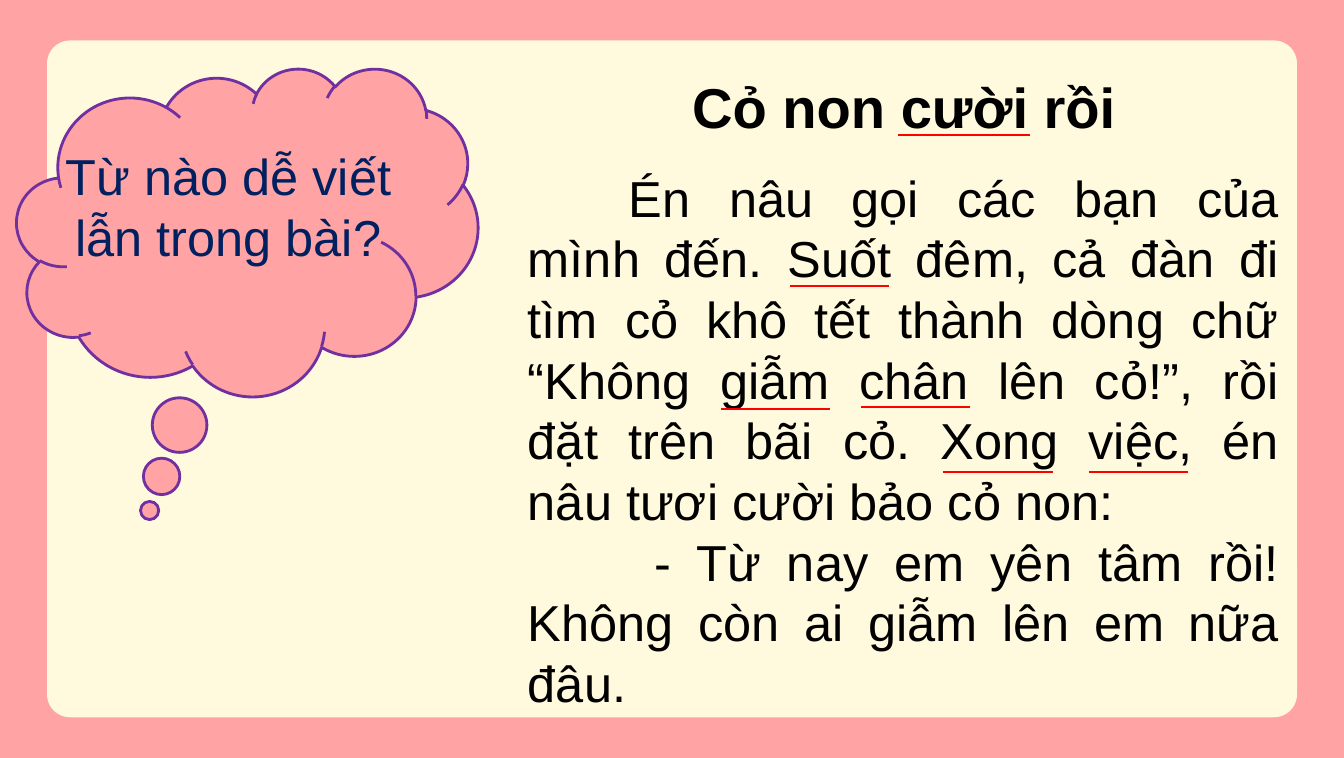
from dataclasses import dataclass

from lxml import etree
from pptx import Presentation
from pptx.dml.color import RGBColor
from pptx.enum.shapes import MSO_CONNECTOR, MSO_SHAPE
from pptx.enum.text import MSO_AUTO_SIZE, PP_ALIGN
from pptx.oxml.ns import qn
from pptx.util import Pt

ROUNDED = MSO_SHAPE.ROUNDED_RECTANGLE
CLOUD = MSO_SHAPE.CLOUD_CALLOUT
STRAIGHT = MSO_CONNECTOR.STRAIGHT
CENTER, JUSTIFY = PP_ALIGN.CENTER, PP_ALIGN.JUSTIFY
GROW = MSO_AUTO_SIZE.SHAPE_TO_FIT_TEXT


@dataclass(frozen=True)
class Theme:
    font: str = "Arial"
    pink: str = "FFA3A4"
    cream: str = "FFF9DE"
    purple: str = "7030A0"
    navy: str = "002060"
    black: str = "000000"
    red: str = "FF0000"
    title_size: int = 40
    body_size: int = 36
    outline: float = 2
    underline: float = 1.5


def rgb(value):
    return RGBColor.from_string(value)


class SlideBuilder:
    def __init__(self, slide, theme):
        self.slide = slide
        self.theme = theme

    def background(self, color):
        fill = self.slide.background.fill
        fill.solid()
        fill.fore_color.rgb = rgb(color)

    def panel(self, kind, box, adjustments, color, outline=None):
        panel = self.slide.shapes.add_shape(kind, *map(Pt, box))
        for index, value in enumerate(adjustments):
            panel.adjustments[index] = value
        panel.shadow.inherit = False
        panel.fill.solid()
        panel.fill.fore_color.rgb = rgb(color)
        if outline:
            panel.line.color.rgb = rgb(outline)
            panel.line.width = Pt(self.theme.outline)
        else:
            panel.line.fill.background()

    def text(self, box, paragraphs, size, color, align, bold=False):
        """Add a text box; paragraphs are (first-line indent, wording) pairs."""
        frame = self.slide.shapes.add_textbox(*map(Pt, box)).text_frame
        frame.word_wrap = True
        frame.auto_size = GROW
        for index, (indent, wording) in enumerate(paragraphs):
            paragraph = frame.add_paragraph() if index else frame.paragraphs[0]
            paragraph.alignment = align
            if indent:
                properties = paragraph._p.get_or_add_pPr()
                properties.set("marL", "0")
                properties.set("indent", str(Pt(indent)))
            run = paragraph.add_run()
            run.text = wording
            run.font.name = self.theme.font
            run.font.size = Pt(size)
            run.font.bold = bold
            run.font.color.rgb = rgb(color)

    def underline(self, left, right, y):
        rule = self.slide.shapes.add_connector(
            STRAIGHT, Pt(left), Pt(y), Pt(right), Pt(y))
        rule.line.color.rgb = rgb(self.theme.red)
        rule.line.width = Pt(self.theme.underline)
        etree.SubElement(rule._element.spPr, qn("a:effectLst"))


def main():
    theme = Theme()
    deck = Presentation()
    deck.slide_width, deck.slide_height = Pt(957.5), Pt(540)
    page = SlideBuilder(deck.slides.add_slide(deck.slide_layouts[6]), theme)

    page.background(theme.pink)
    page.panel(ROUNDED, (33.5, 28.8, 890.5, 482.2), [0.034], theme.cream)
    page.panel(CLOUD, (12, 48.5, 328.5, 233.5), [-0.212, 0.85],
               theme.pink, theme.purple)

    question = [(0, "Từ nào dễ viết lẫn trong bài?")]
    page.text((19.4, 100, 286.6, 94.5), question, theme.body_size,
              theme.navy, CENTER)

    story = [
        (72, "Én nâu gọi các bạn của mình đến. Suốt đêm, cả đàn đi tìm cỏ khô "
             "tết thành dòng chữ “Không giẫm chân lên cỏ!”, rồi đặt trên bãi "
             "cỏ. Xong việc, én nâu tươi cười bảo cỏ non:"),
        (90, "- Từ nay em yên tâm rồi! Không còn ai giẫm lên em nữa đâu."),
    ]
    page.text((369, 115.2, 549.4, 399.6), story, theme.body_size,
              theme.black, JUSTIFY)
    page.text((452, 48.2, 383.8, 55.7), [(0, "Cỏ non cười rồi")],
              theme.title_size, theme.black, CENTER, bold=True)

    tricky_words = {
        "cười": (639.5, 733.5, 96.5),
        "Suốt": (563, 633.5, 203.8),
        "giẫm": (513.5, 591.5, 291.5),
        "chân": (613.5, 691, 290),
        "Xong": (672, 750, 336),
        "việc": (775.5, 846, 336),
    }
    for left, right, y in tricky_words.values():
        page.underline(left, right, y)

    deck.save("out.pptx")


if __name__ == "__main__":
    main()
